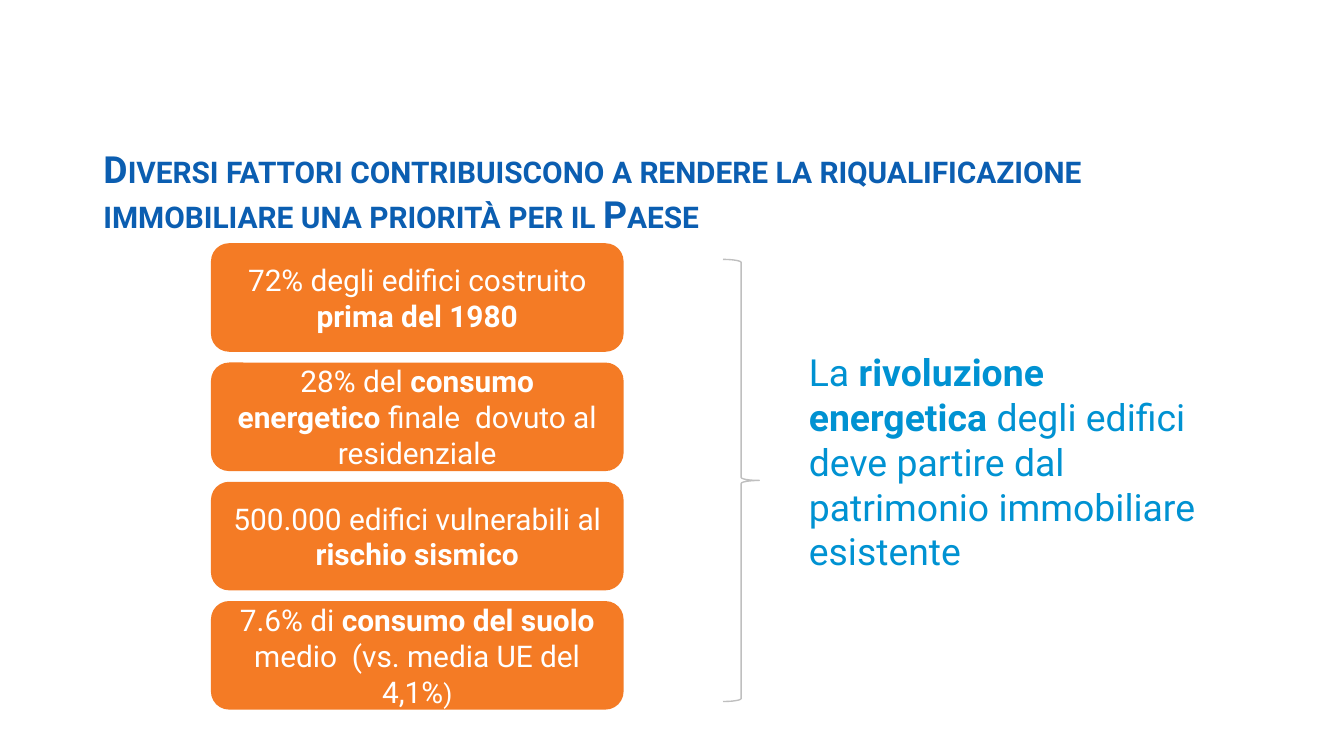
from pptx import Presentation
from pptx.dml.color import RGBColor
from pptx.enum.shapes import MSO_SHAPE
from pptx.enum.text import MSO_ANCHOR, MSO_AUTO_SIZE, PP_ALIGN
from pptx.util import Inches, Pt

COLORS = {
    "heading": "0B5EB1",
    "factor": "F47B25",
    "factor_text": "FFFFFF",
    "brace": "BFBFBF",
    "conclusion": "0092D2",
}
FONT = "Roboto"
HEADING = (
    "Diversi fattori contribuiscono a rendere la riqualificazione "
    "immobiliare una priorità per il Paese"
)
FACTORS = [
    [("72% degli edifici costruito ", False, 16), ("prima del 1980", True, 16)],
    [
        ("28% del ", False, 16),
        ("consumo energetico ", True, 16),
        ("finale  dovuto al residenziale", False, 16),
    ],
    [("500.000 edifici vulnerabili al ", False, 16), ("rischio sismico", True, 16)],
    [
        ("7.6% di ", False, 16),
        ("consumo del suolo ", True, 16),
        ("medio  (vs. media UE del 4,1%", False, 16),
        (")", False, 14),
    ],
]
CONCLUSION = [
    ("La ", False, 20),
    ("rivoluzione energetica", True, 20),
    (" degli edifici deve partire dal patrimonio immobiliare esistente", False, 20),
]


def color(name):
    return RGBColor.from_string(COLORS[name])


def format_run(run, size, bold, color_name):
    run.font.name = FONT
    run.font.size = Pt(size)
    run.font.bold = bold
    run.font.color.rgb = color(color_name)


def write_runs(paragraph, parts, color_name):
    for text, bold, size in parts:
        run = paragraph.add_run()
        run.text = text
        format_run(run, size, bold, color_name)


def place_heading(slide, left, top, width, height):
    heading = slide.shapes.title
    heading.left, heading.top = Inches(left), Inches(top)
    heading.width, heading.height = Inches(width), Inches(height)
    frame = heading.text_frame
    frame.text = HEADING
    frame.word_wrap = True
    frame.auto_size = MSO_AUTO_SIZE.NONE
    frame.vertical_anchor = MSO_ANCHOR.TOP
    frame.paragraphs[0].alignment = PP_ALIGN.LEFT
    run = frame.paragraphs[0].runs[0]
    format_run(run, 20, True, "heading")
    run.font._element.set("cap", "small")


def place_factors(slide, left, top, width, height, gap=0.08):
    card_height = (height - gap * (len(FACTORS) - 1)) / len(FACTORS)
    for row, parts in enumerate(FACTORS):
        card = slide.shapes.add_shape(
            MSO_SHAPE.ROUNDED_RECTANGLE,
            Inches(left),
            Inches(top + row * (card_height + gap)),
            Inches(width),
            Inches(card_height),
        )
        card.shadow.inherit = False
        card.fill.solid()
        card.fill.fore_color.rgb = color("factor")
        card.line.fill.background()
        frame = card.text_frame
        frame.word_wrap = True
        frame.vertical_anchor = MSO_ANCHOR.MIDDLE
        frame.paragraphs[0].alignment = PP_ALIGN.CENTER
        write_runs(frame.paragraphs[0], parts, "factor_text")


def place_brace(slide, left, top, width, height):
    brace = slide.shapes.add_shape(
        MSO_SHAPE.RIGHT_BRACE, Inches(left), Inches(top), Inches(width), Inches(height)
    )
    brace.shadow.inherit = False
    brace.fill.background()
    brace.line.color.rgb = color("brace")
    brace.line.width = Pt(0.75)


def place_conclusion(slide, left, top, width, height):
    conclusion = slide.shapes.add_textbox(
        Inches(left), Inches(top), Inches(width), Inches(height)
    )
    frame = conclusion.text_frame
    frame.word_wrap = True
    frame.auto_size = MSO_AUTO_SIZE.SHAPE_TO_FIT_TEXT
    frame.paragraphs[0].space_after = Pt(3)
    write_runs(frame.paragraphs[0], CONCLUSION, "conclusion")


def main():
    presentation = Presentation()
    presentation.slide_width = Inches(10)
    presentation.slide_height = Inches(10 * 9 / 16)
    slide = presentation.slides.add_slide(presentation.slide_layouts[5])
    place_heading(slide, 0.67, 1.04, 8.86, 0.77)
    place_factors(slide, 1.57, 1.81, 3.07, 3.47)
    place_brace(slide, 5.38, 1.93, 0.27, 3.29)
    place_conclusion(slide, 5.92, 2.55, 3.28, 1.78)
    presentation.save("out.pptx")


if __name__ == "__main__":
    main()
